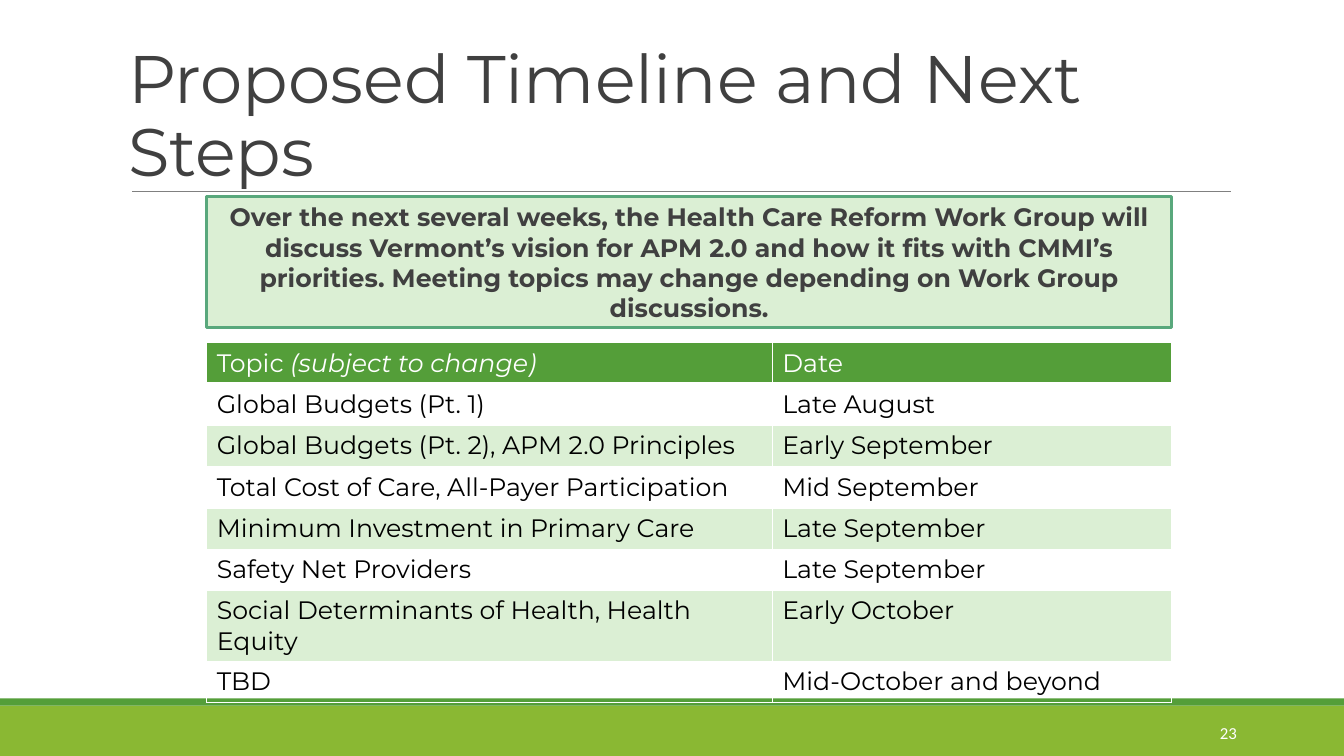
import pptx
import pptx.util
import pptx.dml.color
import pptx.enum.shapes
import pptx.enum.text
import pptx.oxml
import pptx.oxml.ns
from pptx.util import Inches

GREEN, PALE, WHITE, DARK = "549E39", "DBEFD4", "FFFFFF", "404040"


def rgb(value):
    return pptx.dml.color.RGBColor.from_string(value)


def set_font(font, size, color, name="Montserrat"):
    font.size = pptx.util.Pt(size)
    font.name = name
    font.color.rgb = rgb(color)


prs = pptx.Presentation()
prs.slide_width, prs.slide_height = Inches(13.33), Inches(7.5)
s = prs.slides.add_slide(prs.slide_layouts[5])
middle = pptx.enum.text.MSO_ANCHOR.MIDDLE
rectangle = pptx.enum.shapes.MSO_SHAPE.RECTANGLE

# Footer bars
for top, height, color in [(7, 0.5, "8AB833"), (6.93, 0.07, GREEN)]:
    sp = s.shapes.add_shape(rectangle, 0, Inches(top), prs.slide_width, Inches(height))
    sp.shadow.inherit = False
    sp.fill.solid()
    sp.fill.fore_color.rgb = rgb(color)
    sp.line.fill.background()

# Rule under the title
rule = s.shapes.add_connector(pptx.enum.shapes.MSO_CONNECTOR.STRAIGHT,
                              Inches(1.31), Inches(1.9), Inches(12.21), Inches(1.9))
rule.line.color.rgb = rgb("808080")
rule.line.width = pptx.util.Pt(0.5)
rule._element.spPr.append(pptx.oxml.parse_xml(
    f"<a:effectLst {pptx.oxml.ns.nsdecls('a')}/>"))

# Title
title = s.shapes.title
title.left, title.top = Inches(1.17), Inches(0.83)
title.width, title.height = Inches(9.69), Inches(0.69)
tf = title.text_frame
tf.text = "Proposed Timeline and Next Steps"
tf.word_wrap = True
tf.auto_size = pptx.enum.text.MSO_AUTO_SIZE.NONE
tf.vertical_anchor = middle
p = tf.paragraphs[0]
p.alignment = pptx.enum.text.PP_ALIGN.LEFT
p.line_spacing = 0.9
set_font(p.font, 48, DARK)

# Slide number
number = s.shapes.add_textbox(Inches(12), Inches(7.08), Inches(0.43), Inches(0.38))
tf = number.text_frame
tf.text = "23"
tf.word_wrap = True
tf.vertical_anchor = middle
set_font(tf.paragraphs[0].font, 12, WHITE, "Calibri")

# Summary box
box = s.shapes.add_shape(rectangle, Inches(2.05), Inches(1.95), Inches(9.57), Inches(1.3))
box.shadow.inherit = False
box.fill.solid()
box.fill.fore_color.rgb = rgb(PALE)
box.line.color.rgb = rgb("59A87C")
box.line.width = pptx.util.Pt(2.25)
tf = box.text_frame
tf.text = ("Over the next several weeks, the Health Care Reform Work Group will discuss "
           "Vermont’s vision for APM 2.0 and how it fits with CMMI’s priorities. "
           "Meeting topics may change depending on Work Group discussions.")
tf.word_wrap = True
tf.vertical_anchor = middle
p = tf.paragraphs[0]
p.alignment = pptx.enum.text.PP_ALIGN.CENTER
set_font(p.font, 18, DARK)
p.font.bold = True

# Timeline table
timeline = [
    ("Topic ", "Date"),
    ("Global Budgets (Pt. 1)", "Late August"),
    ("Global Budgets (Pt. 2), APM 2.0 Principles", "Early September"),
    ("Total Cost of Care, All-Payer Participation", "Mid September"),
    ("Minimum Investment in Primary Care", "Late September"),
    ("Safety Net Providers", "Late September"),
    ("Social Determinants of Health, Health Equity", "Early October"),
    ("TBD", "Mid-October and beyond"),
]
row_heights = [0.41] * 6 + [0.7, 0.41]
table = s.shapes.add_table(len(timeline), 2, Inches(2.05), Inches(3.4),
                           Inches(9.57), Inches(sum(row_heights))).table
for column, width in zip(table.columns, [5.61, 3.96]):
    column.width = Inches(width)
for i, (entry, height) in enumerate(zip(timeline, row_heights)):
    table.rows[i].height = Inches(height)
    for j, text in enumerate(entry):
        cell = table.cell(i, j)
        if i % 2:
            cell.fill.background()
        else:
            cell.fill.solid()
            cell.fill.fore_color.rgb = rgb(PALE if i else GREEN)
        p = cell.text_frame.paragraphs[0]
        p.add_run().text = text
        set_font(p.font, 18, "000000" if i else WHITE)
        p.font.bold = False
        # White borders, thicker below the header
        widths = {"L": 1, "R": 1, "T": 3 if i == 1 else 1, "B": 1 if i else 3}
        for k, (side, points) in enumerate(widths.items()):
            cell._tc.get_or_add_tcPr().insert(k, pptx.oxml.parse_xml(
                f'<a:ln{side} {pptx.oxml.ns.nsdecls("a")} w="{pptx.util.Pt(points)}">'
                f'<a:solidFill><a:srgbClr val="{WHITE}"/></a:solidFill></a:ln{side}>'))

# Italic remark in the header
r = table.cell(0, 0).text_frame.paragraphs[0].add_run()
r.text = "(subject to change)"
r.font.italic = True

prs.save("out.pptx")
